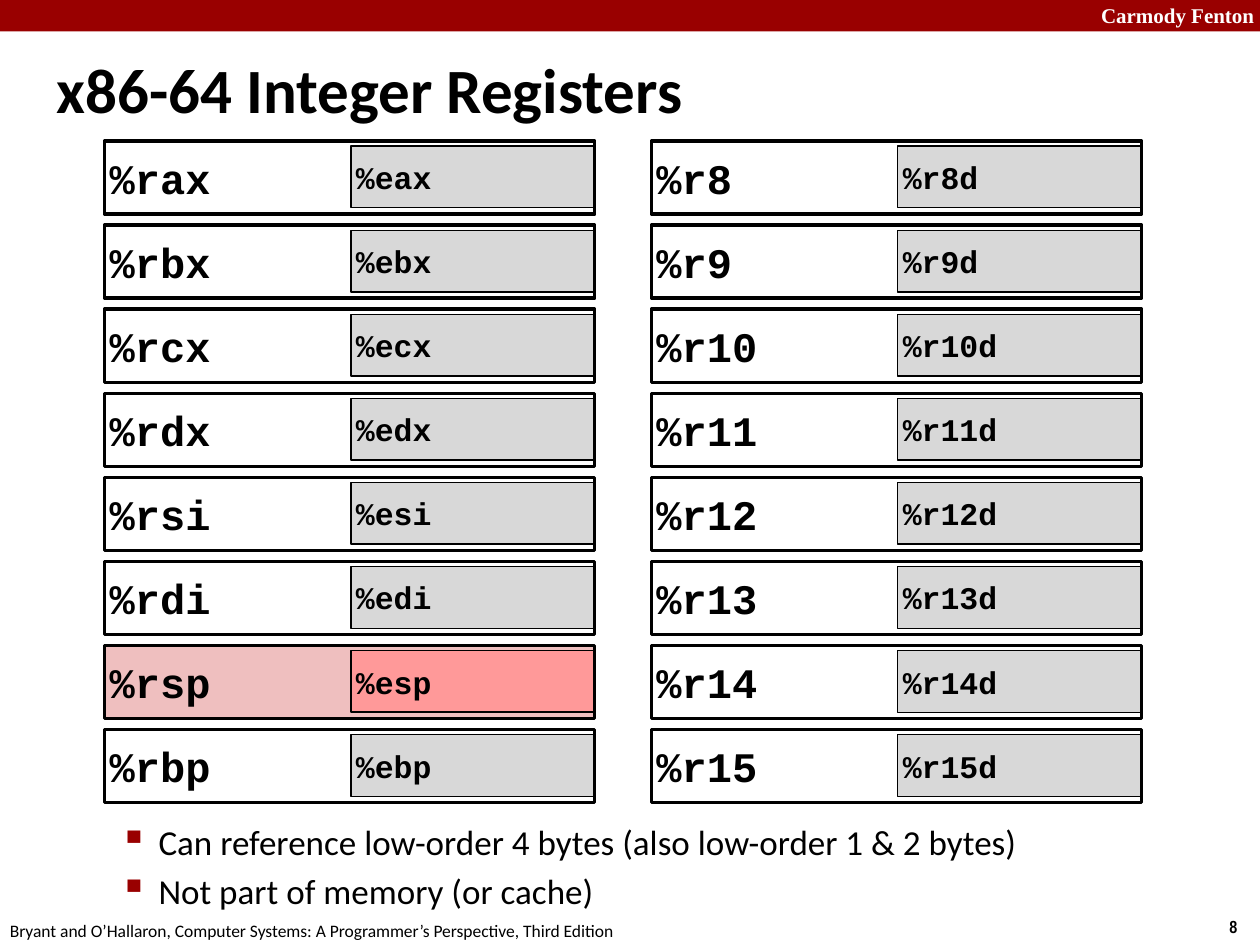
from lxml import etree
from pptx import Presentation
from pptx.dml.color import RGBColor
from pptx.enum.shapes import MSO_SHAPE
from pptx.enum.text import MSO_ANCHOR, PP_ALIGN
from pptx.oxml.ns import qn
from pptx.util import Inches, Pt

RECTANGLE = MSO_SHAPE.RECTANGLE
TOP, MIDDLE = MSO_ANCHOR.TOP, MSO_ANCHOR.MIDDLE
LEFT = PP_ALIGN.LEFT

BLACK, WHITE, DARK_RED, GRAY = "000000", "FFFFFF", "990000", "D8D8D8"
PINK, LIGHT_RED = "EFBFBF", "FF9999"


def add_text(shape, lines, font, size, color=BLACK, bold=False, wrap=True, anchor=TOP):
    frame = shape.text_frame
    frame.word_wrap = wrap
    frame.vertical_anchor = anchor
    frame.text = "\n".join(lines)
    style = {"name": font, "size": Pt(size), "bold": bold}
    for para in frame.paragraphs:
        para.alignment = LEFT
        for span in para.runs:
            for key, value in style.items():
                setattr(span.font, key, value)
            span.font.color.rgb = RGBColor.from_string(color)
    return frame


def add_box(left, top, width, height, fill, line_width=0):
    box = page.shapes.add_shape(
        RECTANGLE, Inches(left), Inches(top), Inches(width), Inches(height))
    box.shadow.inherit = False
    if fill:
        box.fill.solid()
        box.fill.fore_color.rgb = RGBColor.from_string(fill)
    else:
        box.fill.background()
    if line_width:
        box.line.width = Pt(line_width)
        box.line.color.rgb = RGBColor.from_string(BLACK)
    else:
        box.line.fill.background()
    return box


deck = Presentation()
deck.slide_width, deck.slide_height = Inches(10), Inches(7.5)
page = deck.slides.add_slide(deck.slide_layouts[6])

# Header band
add_box(0, 0, 10, 0.25, DARK_RED)

# Text boxes: header name, page number, footer, title, notes on registers
NOTES = ["Can reference low-order 4 bytes (also low-order 1 & 2 bytes)",
         "Not part of memory (or cache)"]
FOOTER = ("Bryant and O’Hallaron, Computer Systems: "
          "A Programmer’s Perspective, Third Edition")
TEXTS = [
    ((8.64, -0.03, 1.43, 0.3), ["Carmody Fenton"],
     {"font": "Times New Roman", "size": 12, "color": WHITE, "bold": True}),
    ((9.66, 7.22, 0.34, 0.27), ["8"],
     {"font": "Arial Narrow", "size": 10, "bold": True, "wrap": False}),
    ((-0.02, 7.25, 5.08, 0.27), [FOOTER],
     {"font": "Calibri", "size": 10, "wrap": False}),
    ((0.35, 0.29, 8.3, 0.83), ["x86-64 Integer Registers"],
     {"font": "Calibri", "size": 36, "bold": True, "anchor": MIDDLE}),
    ((0.35, 6.46, 8.02, 0.92), NOTES, {"font": "Calibri", "size": 20}),
]
for place, lines, style in TEXTS:
    text_box = page.shapes.add_textbox(*(Inches(length) for length in place))
    frame = add_text(text_box, lines, **style)

# Square bullets on the notes, the last text box
for para in frame.paragraphs:
    para.space_before = Pt(4)
    props = para._p.get_or_add_pPr()
    props.set("marL", str(Inches(0.81)))
    props.set("indent", str(Inches(-0.31)))
    bullet_color = etree.SubElement(props, qn("a:buClr"))
    etree.SubElement(bullet_color, qn("a:srgbClr"), val=DARK_RED)
    etree.SubElement(props, qn("a:buSzPct"), val="110000")
    etree.SubElement(props, qn("a:buChar"), char="▪")

# Registers: 64-bit box with its low 32-bit half inside
COLUMNS = [
    (0.83, [(f"%r{name}", f"%e{name}")
            for name in ("ax", "bx", "cx", "dx", "si", "di", "sp", "bp")]),
    (5.17, [(f"%r{number}", f"%r{number}d") for number in range(8, 16)]),
]
FIRST_TOP, ROW_STEP = 1.12, 4.67 / 7

for left, registers in COLUMNS:
    for row, (full_name, half_name) in enumerate(registers):
        top = FIRST_TOP + row * ROW_STEP
        stack_pointer = full_name == "%rsp"
        half = (half_name, 18, (left + 1.955, top + 0.04, 1.93, 0.49),
                LIGHT_RED if stack_pointer else GRAY, 1 if stack_pointer else 0.75)
        full = (full_name, 24, (left, top, 3.89, 0.58),
                PINK if stack_pointer else None, 2)
        # The filled stack pointer box lies behind its half
        for name, size, place, fill, line_width in (
                (full, half) if stack_pointer else (half, full)):
            box = add_box(*place, fill, line_width)
            frame = add_text(box, [name], "Courier New", size, bold=True, anchor=MIDDLE)
            for side in ("left", "top", "right", "bottom"):
                setattr(frame, f"margin_{side}", Inches(0.04))

deck.save("out.pptx")
